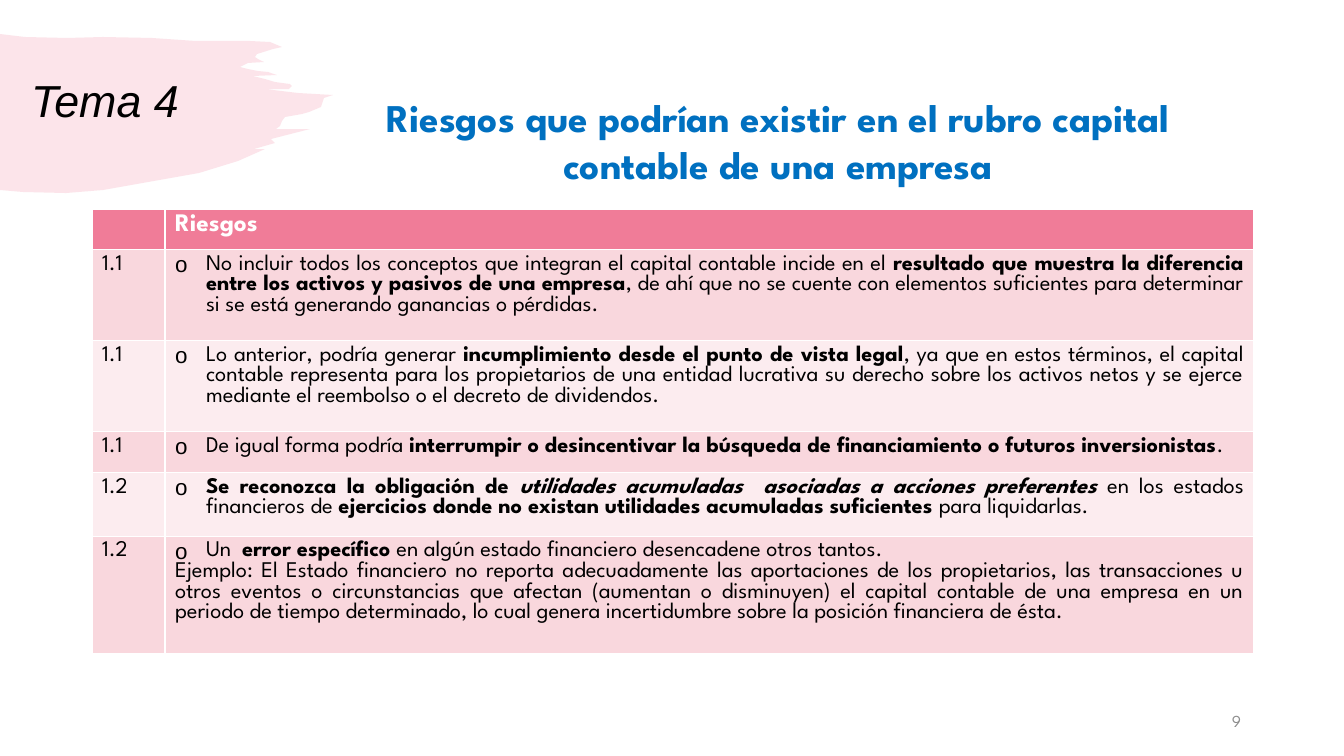
from lxml.etree import SubElement as Sub
from pptx import Presentation
from pptx.dml.color import RGBColor as RGB
from pptx.enum.text import MSO_ANCHOR as Anchor, PP_ALIGN as Align
from pptx.oxml.ns import qn
from pptx.util import Emu, Pt

PX = 914400 / 100.8
COLORS = {"rose": "F07C98", "pink": "F9D7DD", "pale": "FCECEF", "blue": "0070C0",
          "gray": "8C8C8C", "black": "000000", "white": "FFFFFF"}
SPARTAN = "League Spartan"


def px(*nums):
    """Turn px into a list of EMU lengths."""
    return [Emu(round(num * PX)) for num in nums]


def write(par, text, size, color, style="", face=SPARTAN):
    """Add one run; style holds b for bold and i for italic."""
    run = par.add_run()
    run.text = text
    font = run.font
    font.name, font.size = face, Pt(size)
    font.bold, font.italic = "b" in style, "i" in style
    font.color.rgb = RGB.from_string(COLORS[color])


deck = Presentation()
deck.slide_width, deck.slide_height = px(1344, 756)
slide = deck.slides.add_slide(deck.slide_layouts[5])
shapes = slide.shapes
title = shapes.title

# Brush stroke behind the title
BRUSH = [
    (0, 34), (25, 37), (67, 38), (103, 37), (152, 38), (196, 41), (250, 41), (270, 42),
    (282, 47), (273, 49), (257, 54), (255, 57), (258, 59), (264, 62), (248, 63), (240, 67),
    (248, 69), (258, 71), (268, 72), (277, 75), (253, 76), (265, 79), (275, 82), (282, 83),
    (290, 84), (292, 86), (289, 89), (286, 89), (265, 89), (298, 93), (333, 95), (324, 98),
    (321, 107), (309, 112), (302, 114), (285, 117), (282, 121), (280, 126), (276, 129),
    (310, 129), (271, 139), (275, 143), (254, 149), (265, 149), (238, 161), (199, 173),
    (103, 190), (66, 193), (23, 192), (0, 190),
]
pen = shapes.build_freeform(*BRUSH[0], scale=PX)
pen.add_line_segments(BRUSH[1:], close=True)
brush = pen.convert_to_shape()
brush.shadow.inherit = False
brush.line.fill.background()
brush.fill.solid()
brush.fill.fore_color.rgb = RGB.from_string(COLORS["rose"])
tint = brush.fill._xPr.find(".//" + qn("a:srgbClr"))
Sub(tint, qn("a:alpha"), val="20000")
title._element.addprevious(brush._element)

# Title, heading and page number
title.left, title.top, title.width, title.height = px(21, 57, 255, 93)
title.text_frame.vertical_anchor = Anchor.MIDDLE
par = title.text_frame.paragraphs[0]
par.alignment, par.line_spacing = Align.LEFT, 0.9
write(par, "Tema 4", 32, "black", "i", "Arial")

LABELS = [
    ((334, 88, 888, 105), "Riesgos que podrían existir en el rubro capital contable de una empresa",
     28, "blue", "b", Align.CENTER, Anchor.TOP),
    ((949, 701, 302, 40), "9", 12, "gray", "", Align.RIGHT, Anchor.MIDDLE),
]
for area, text, size, color, style, align, anchor in LABELS:
    frame = shapes.add_textbox(*px(*area)).text_frame
    frame.word_wrap, frame.vertical_anchor = True, anchor
    par = frame.paragraphs[0]
    par.alignment = align
    write(par, text, size, color, style)

# Table of risks: number, row height, paragraphs made of (text, style) runs
RISKS = [
    ("1.1", 91, [[
        ("No incluir todos los conceptos que integran el capital contable incide en el ", ""),
        ("resultado que muestra la diferencia entre los activos y pasivos de una empresa", "b"),
        (", de ahí que no se cuente con elementos suficientes para determinar si se está "
         "generando ganancias o pérdidas.", "")]]),
    ("1.1", 91, [[
        ("Lo anterior, podría generar ", ""),
        ("incumplimiento desde el punto de vista legal", "b"),
        (", ya que en estos términos, el capital contable representa para los propietarios "
         "de una entidad lucrativa su derecho sobre los activos netos y se ejerce mediante "
         "el reembolso o el decreto de dividendos.", "")]]),
    ("1.1", 41, [[
        ("De igual forma podría ", ""),
        ("interrumpir o desincentivar la búsqueda de financiamiento o futuros inversionistas", "b"),
        (".", "")]]),
    ("1.2", 64, [[
        ("Se reconozca la obligación de ", "b"),
        ("utilidades acumuladas  asociadas a acciones preferentes ", "bi"),
        ("en los estados financieros de ", ""),
        ("ejercicios donde no existan utilidades acumuladas suficientes ", "b"),
        ("para liquidarlas.", "")]]),
    ("1.2", 117, [
        [("Un  ", ""),
         ("error específico ", "b"),
         ("en algún estado financiero desencadene otros tantos.", "")],
        [("Ejemplo: El Estado financiero no reporta adecuadamente las aportaciones de los "
          "propietarios, las transacciones u otros eventos o circunstancias que afectan "
          "(aumentan o disminuyen) el capital contable de una empresa en un periodo de tiempo "
          "determinado, lo cual genera incertidumbre sobre la posición financiera de ésta.", "")]]),
]
HEAD = 40
INDENT = px(31)[0]
tall = HEAD + sum(high for _, high, _ in RISKS)
table = shapes.add_table(len(RISKS) + 1, 2, *px(92, 209, 1162, tall)).table
table.columns[0].width, table.columns[1].width = px(73, 1089)
table.rows[0].height = px(HEAD)[0]
write(table.cell(0, 1).text_frame.paragraphs[0], "Riesgos", 18, "white", "b")

for row, (num, high, pars) in enumerate(RISKS, 1):
    table.rows[row].height = px(high)[0]
    par = table.cell(row, 0).text_frame.paragraphs[0]
    par.alignment = Align.JUSTIFY
    write(par, num, 16, "black")
    frame = table.cell(row, 1).text_frame
    for at, runs in enumerate(pars):
        par = frame.add_paragraph() if at else frame.paragraphs[0]
        par.alignment = Align.JUSTIFY
        if at == 0:
            props = par._p.get_or_add_pPr()
            props.set("marL", str(INDENT))
            props.set("indent", str(-INDENT))
            Sub(props, qn("a:buFont"), typeface="Arial")
            Sub(props, qn("a:buChar"), char="o")
        for text, style in runs:
            write(par, text, 16, "black", style)

for row in range(len(RISKS) + 1):
    shade = ("pale", "pink")[row % 2] if row else "rose"
    for cell in table.rows[row].cells:
        cell.fill.solid()
        cell.fill.fore_color.rgb = RGB.from_string(COLORS[shade])

deck.save("out.pptx")
